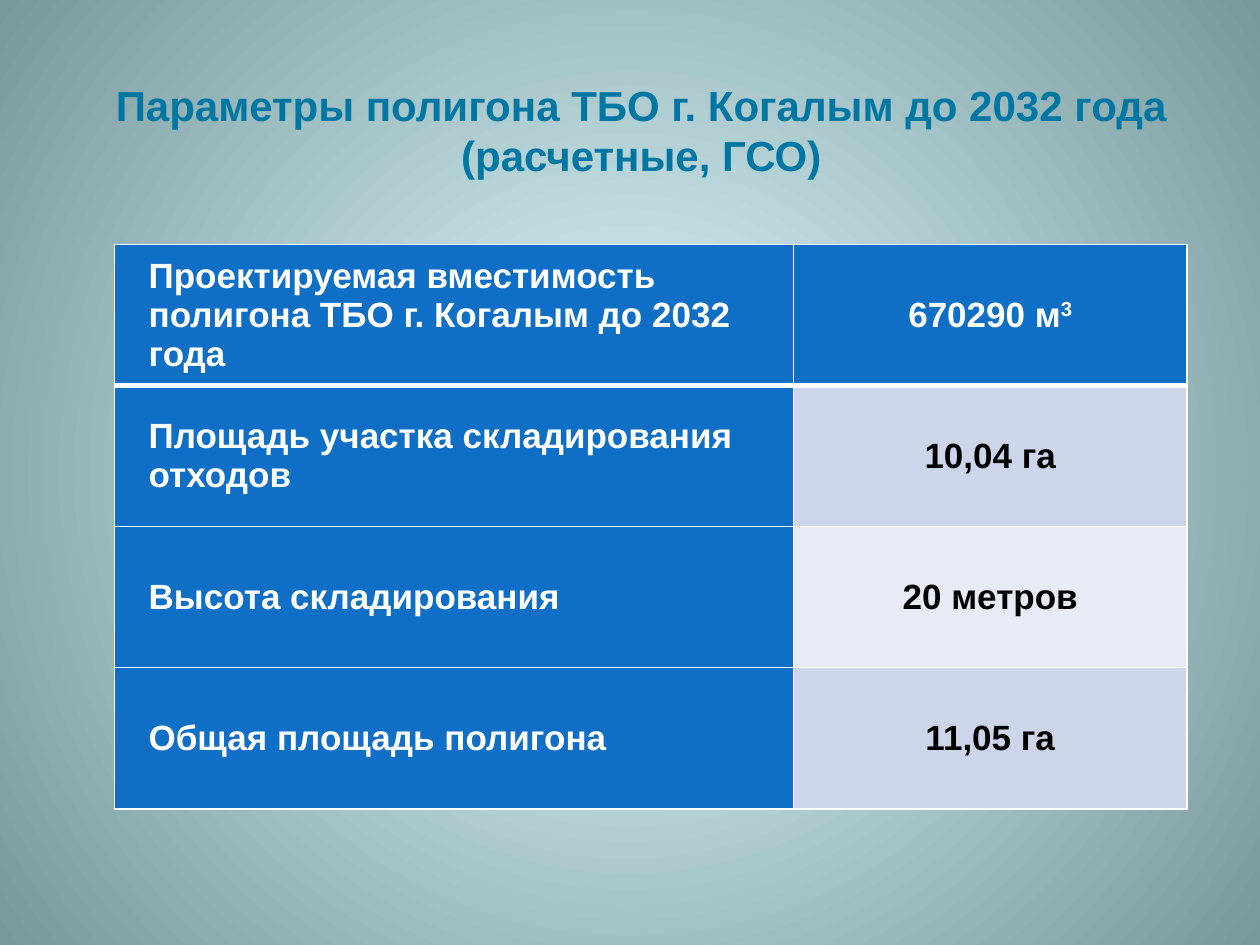
from lxml import etree
from pptx import Presentation
from pptx.dml.color import RGBColor
from pptx.enum import text
from pptx.oxml.ns import qn
from pptx.util import Emu, Inches, Pt

TEAL = RGBColor(0x00, 0x76, 0xA3)
BLUE = RGBColor(0x0F, 0x6F, 0xC6)
BAND_DARK = RGBColor(0xCC, 0xD5, 0xEA)
BAND_LIGHT = RGBColor(0xE7, 0xEB, 0xF5)
WHITE = RGBColor(0xFF, 0xFF, 0xFF)
BLACK = RGBColor(0x00, 0x00, 0x00)
GLOW = RGBColor(0xDE, 0xFB, 0xFF)
EDGE = RGBColor(0x79, 0x98, 0x9C)

TITLE = "Параметры полигона ТБО г. Когалым до 2032 года\v(расчетные, ГСО)"
# Label, value, superscript of the value
PARAMETERS = [
    ("Проектируемая вместимость полигона ТБО г. Когалым до 2032 года", "670290 м", "3"),
    ("Площадь участка складирования отходов", "10,04 га", ""),
    ("Высота складирования", "20 метров", ""),
    ("Общая площадь полигона", "11,05 га", ""),
]
COLUMN_WIDTHS = (5.39, 3.12)
ROW_HEIGHT = 1.12


def write(frame, content, size=20, color=WHITE, centered=True, indent=0, superscript=""):
    frame.word_wrap = True
    paragraph = frame.paragraphs[0]
    paragraph.text = content
    if superscript:
        run = paragraph.add_run()
        run.text = superscript
        run._r.get_or_add_rPr().set("baseline", "30000")
    if indent:
        properties = paragraph._p.get_or_add_pPr()
        properties.set("marL", str(Inches(indent)))
        properties.set("indent", "0")
    paragraph.alignment = text.PP_ALIGN.CENTER if centered else text.PP_ALIGN.LEFT
    for run in paragraph.runs:
        run.font.name = "Arial"
        run.font.size = Pt(size)
        run.font.bold = True
        run.font.color.rgb = color


def style_cell(cell, fill, top, bottom):
    """Set fill, margins and white borders; top and bottom are widths in points."""
    cell.vertical_anchor = text.MSO_ANCHOR.MIDDLE
    cell.margin_left = cell.margin_right = Inches(0.07)
    cell.margin_top = cell.margin_bottom = Emu(0)
    properties = cell._tc.get_or_add_tcPr()
    for side, width in (("L", 1), ("R", 1), ("T", top), ("B", bottom)):
        line = etree.SubElement(properties, qn(f"a:ln{side}"), w=str(Pt(width)))
        solid = etree.SubElement(line, qn("a:solidFill"))
        etree.SubElement(solid, qn("a:srgbClr"), val=str(WHITE))
    cell.fill.solid()
    cell.fill.fore_color.rgb = fill


def paint_background(slide):
    """Fill the background with a circular gradient from the centre."""
    fill = slide.background.fill
    fill.gradient()
    for stop, color, position in zip(fill.gradient_stops, (GLOW, EDGE), (0, 1)):
        stop.color.rgb = color
        stop.position = position
    gradient = slide.background._cSld.find(f".//{qn('a:gradFill')}")
    linear = gradient.find(qn("a:lin"))
    circle = etree.Element(qn("a:path"), path="circle")
    etree.SubElement(circle, qn("a:fillToRect"), dict.fromkeys("ltrb", "50000"))
    gradient.replace(linear, circle)


def add_parameter_table(slide):
    count = len(PARAMETERS)
    table = slide.shapes.add_table(
        count, 2, Inches(0.91), Inches(1.94),
        Inches(sum(COLUMN_WIDTHS)), Inches(ROW_HEIGHT * count)).table
    table.first_col = True
    for column, width in zip(table.columns, COLUMN_WIDTHS):
        column.width = Inches(width)
    for index, (label, value, superscript) in enumerate(PARAMETERS):
        table.rows[index].height = Inches(ROW_HEIGHT)
        label_cell, value_cell = table.cell(index, 0), table.cell(index, 1)
        is_header = index == 0
        band = BLUE if is_header else BAND_DARK if index % 2 else BAND_LIGHT
        for cell, fill in ((label_cell, BLUE), (value_cell, band)):
            style_cell(cell, fill, top=3 if index == 1 else 1, bottom=3 if is_header else 1)
        write(label_cell.text_frame, label, centered=False, indent=0.2)
        write(value_cell.text_frame, value, color=WHITE if is_header else BLACK,
              superscript=superscript)


def main():
    presentation = Presentation()
    presentation.slide_width, presentation.slide_height = Inches(10), Inches(7.5)
    slide = presentation.slides.add_slide(presentation.slide_layouts[6])
    paint_background(slide)
    title = slide.shapes.add_textbox(Inches(0.59), Inches(0.36), Inches(9), Inches(1.34))
    title.text_frame.vertical_anchor = text.MSO_ANCHOR.MIDDLE
    write(title.text_frame, TITLE, size=24, color=TEAL)
    add_parameter_table(slide)
    presentation.save("out.pptx")


if __name__ == "__main__":
    main()
